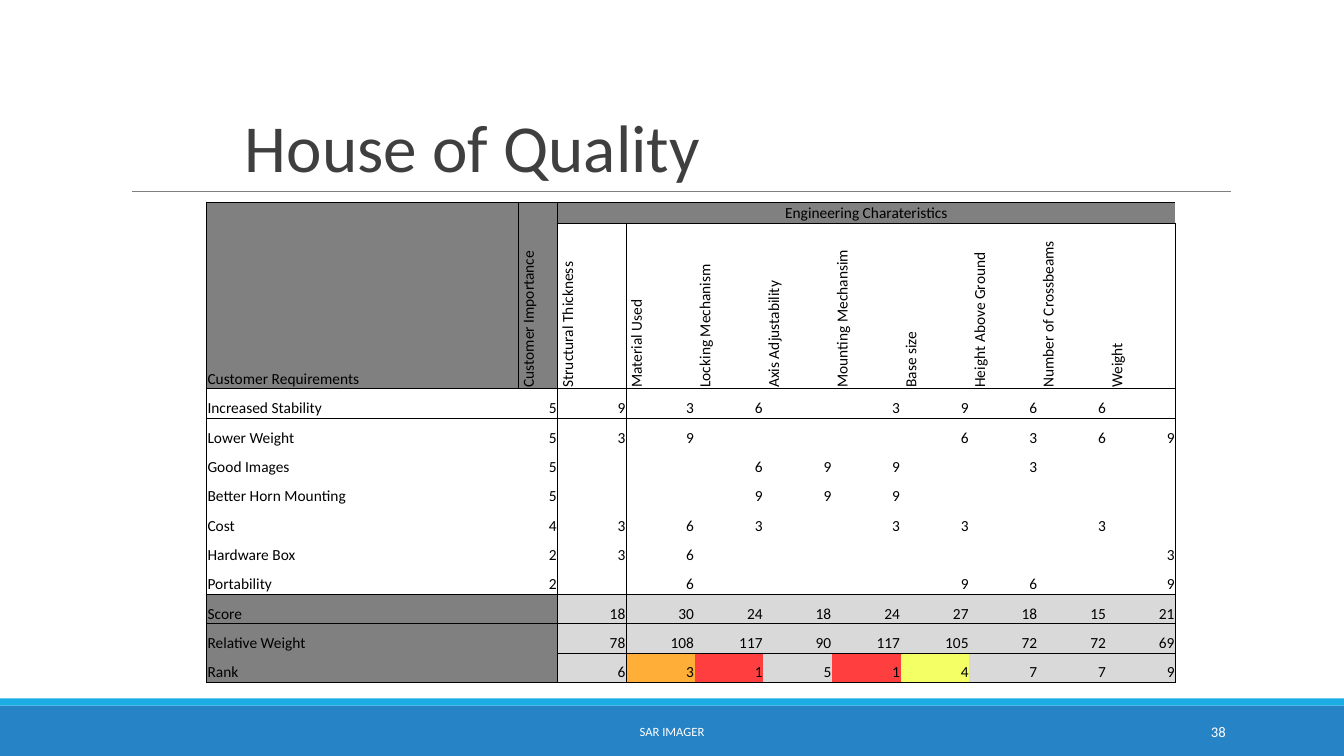
from lxml.etree import SubElement
from pptx import Presentation
from pptx.dml.color import RGBColor
from pptx.enum.shapes import MSO_CONNECTOR as Connector, MSO_SHAPE as Shape
from pptx.enum.text import MSO_ANCHOR as Anchor, MSO_AUTO_SIZE as AutoSize, PP_ALIGN as Align
from pptx.oxml.ns import qn
from pptx.util import Cm, Pt

COLOURS = {
    "title": "3F3F3F", "rule": "7F7F7F", "bar": "2683C6", "stripe": "1CADE4",
    "white": "FFFFFF", "black": "000000", "header": "808080", "summary": "D9D9D9",
    "first": "FF3F3F", "third": "FFAE37", "fourth": "F4FF65",
}
FONT = "Calibri"
NO_GRID_STYLE = "{2D5ABB26-0587-4C30-8999-92F81FD0307C}"
CHARACTERISTICS = [
    "Structural Thickness", "Material Used", "Locking Mechanism", "Axis Adjustability",
    "Mounting Mechansim", "Base size", "Height Above Ground", "Number of Crossbeams", "Weight",
]
ROWS = [
    ["Customer Requirements", "Customer Importance", "Engineering Charateristics"] + [""] * 8,
    ["", ""] + CHARACTERISTICS,
    "Increased Stability,5,9,3,6,,3,9,6,6,".split(","),
    "Lower Weight,5,3,9,,,,6,3,6,9".split(","),
    "Good Images,5,,,6,9,9,,3,,".split(","),
    "Better Horn Mounting,5,,,9,9,9,,,,".split(","),
    "Cost,4,3,6,3,,3,3,,3,".split(","),
    "Hardware Box,2,3,6,,,,,,,3".split(","),
    "Portability,2,,6,,,,9,6,,9".split(","),
    "Score,,18,30,24,18,24,27,18,15,21".split(","),
    "Relative Weight,,78,108,117,90,117,105,72,72,69".split(","),
    "Rank,,6,3,1,5,1,4,7,7,9".split(","),
]
RANK_FILLS = {"1": "first", "3": "third", "4": "fourth"}
MERGES = [(0, 0, 1, 0), (0, 1, 1, 1), (0, 2, 0, 10)]
FRAMES = MERGES + [
    (1, 2, 1, 10), (2, 0, 8, 1), (2, 2, 8, 10),
    (9, 0, 11, 1), (9, 2, 10, 10), (11, 2, 11, 10),
]


def rgb(name):
    return RGBColor.from_string(COLOURS[name])


def write_text(frame, text, size=11, colour="black", align=Align.LEFT, spacing=None):
    para = frame.paragraphs[0]
    para.alignment = align
    if spacing:
        para.line_spacing = spacing
    if not text:
        SubElement(para._p, qn("a:endParaRPr"), sz=str(size * 100))
        return
    span = para.add_run()
    span.text = text
    span.font.name = FONT
    span.font.size = Pt(size)
    span.font.color.rgb = rgb(colour)


def add_title(page, text):
    title = page.shapes.title
    title.left, title.top, title.width, title.height = Cm(5.92), Cm(0.79), Cm(27.94), Cm(4.04)
    title.text_frame.auto_size = AutoSize.NONE
    title.text_frame.vertical_anchor = Anchor.BOTTOM
    write_text(title.text_frame, text, size=48, colour="title", spacing=0.85)


def add_band(page, top, height, colour):
    band = page.shapes.add_shape(Shape.RECTANGLE, 0, Cm(top), Cm(33.87), Cm(height))
    band.shadow.inherit = False
    band.fill.solid()
    band.fill.fore_color.rgb = rgb(colour)
    band.line.fill.background()


def add_rule(page):
    rule = page.shapes.add_connector(Connector.STRAIGHT, Cm(3.33), Cm(4.82), Cm(31.01), Cm(4.82))
    rule.line.color.rgb = rgb("rule")
    rule.line.width = Pt(0.75)
    SubElement(rule._element.spPr, qn("a:effectLst"))


def add_footer_text(page, left, width, text, **text_format):
    box = page.shapes.add_textbox(Cm(left), Cm(17.94), Cm(width), Cm(1.01))
    box.text_frame.word_wrap = True
    box.text_frame.vertical_anchor = Anchor.MIDDLE
    write_text(box.text_frame, text, colour="white", **text_format)


def cell_sides(row, column):
    sides = set()
    for top, left, bottom, right in FRAMES:
        if top <= row <= bottom and left <= column <= right:
            edges = {"L": column == left, "R": column == right,
                     "T": row == top, "B": row == bottom}
            sides |= {side for side, on_edge in edges.items() if on_edge}
    return sides


def add_borders(cell, sides):
    properties = cell._tc.get_or_add_tcPr()
    for side in "LRTB":
        if side in sides:
            line = SubElement(properties, qn(f"a:ln{side}"), w=str(Pt(0.5)))
            fill = SubElement(line, qn("a:solidFill"))
            SubElement(fill, qn("a:srgbClr"), val=COLOURS["black"])


def cell_fill(row, column, text):
    if row == 0 or column < 2 and (row == 1 or row > 8):
        return "header"
    if row == 11:
        return RANK_FILLS.get(text, "summary")
    return "summary" if row > 8 else None


def format_cell(cell, row, column, text):
    add_borders(cell, cell_sides(row, column))
    colour = cell_fill(row, column, text)
    if colour:
        cell.fill.solid()
        cell.fill.fore_color.rgb = rgb(colour)
    else:
        cell.fill.background()
    cell.margin_left = cell.margin_right = cell.margin_top = Cm(0.02)
    cell.margin_bottom = 0
    cell.vertical_anchor = Anchor.BOTTOM
    if (row, column) == (0, 1) or row == 1 and column > 1:
        cell._tc.get_or_add_tcPr().set("vert", "vert270")
    align = Align.LEFT
    if (row, column) == (0, 2):
        align = Align.CENTER
    elif row > 1 and column > 0:
        align = Align.RIGHT
    write_text(cell.text_frame, text, align=align)


def add_quality_table(page):
    widths = [7.85, 0.99] + [1.73] * 9
    heights = [0.53, 4.17] + [0.74] * 10
    frame = page.shapes.add_table(len(heights), len(widths), Cm(5.21), Cm(5.09),
                                  Cm(sum(widths)), Cm(sum(heights)))
    table = frame.table
    table.first_row = table.horz_banding = False
    table._tbl.tblPr.find(qn("a:tableStyleId")).text = NO_GRID_STYLE
    for column, width in zip(table.columns, widths):
        column.width = Cm(width)
    for row, height in zip(table.rows, heights):
        row.height = Cm(height)
    for row, texts in enumerate(ROWS):
        for column, text in enumerate(texts):
            format_cell(table.cell(row, column), row, column, text)
    for top, left, bottom, right in MERGES:
        table.cell(top, left).merge(table.cell(bottom, right))


def main():
    deck = Presentation()
    deck.slide_width, deck.slide_height = Cm(33.87), Cm(19.05)
    page = deck.slides.add_slide(deck.slide_layouts[5])
    add_rule(page)
    add_band(page, 17.78, 1.27, "bar")
    add_band(page, 17.6, 0.18, "stripe")
    add_footer_text(page, 10.24, 13.39, "SAR IMAGER", size=9, align=Align.CENTER)
    add_footer_text(page, 27.51, 3.63, "38", size=10.5, align=Align.RIGHT)
    add_title(page, "House of Quality")
    add_quality_table(page)
    deck.save("out.pptx")


if __name__ == "__main__":
    main()
